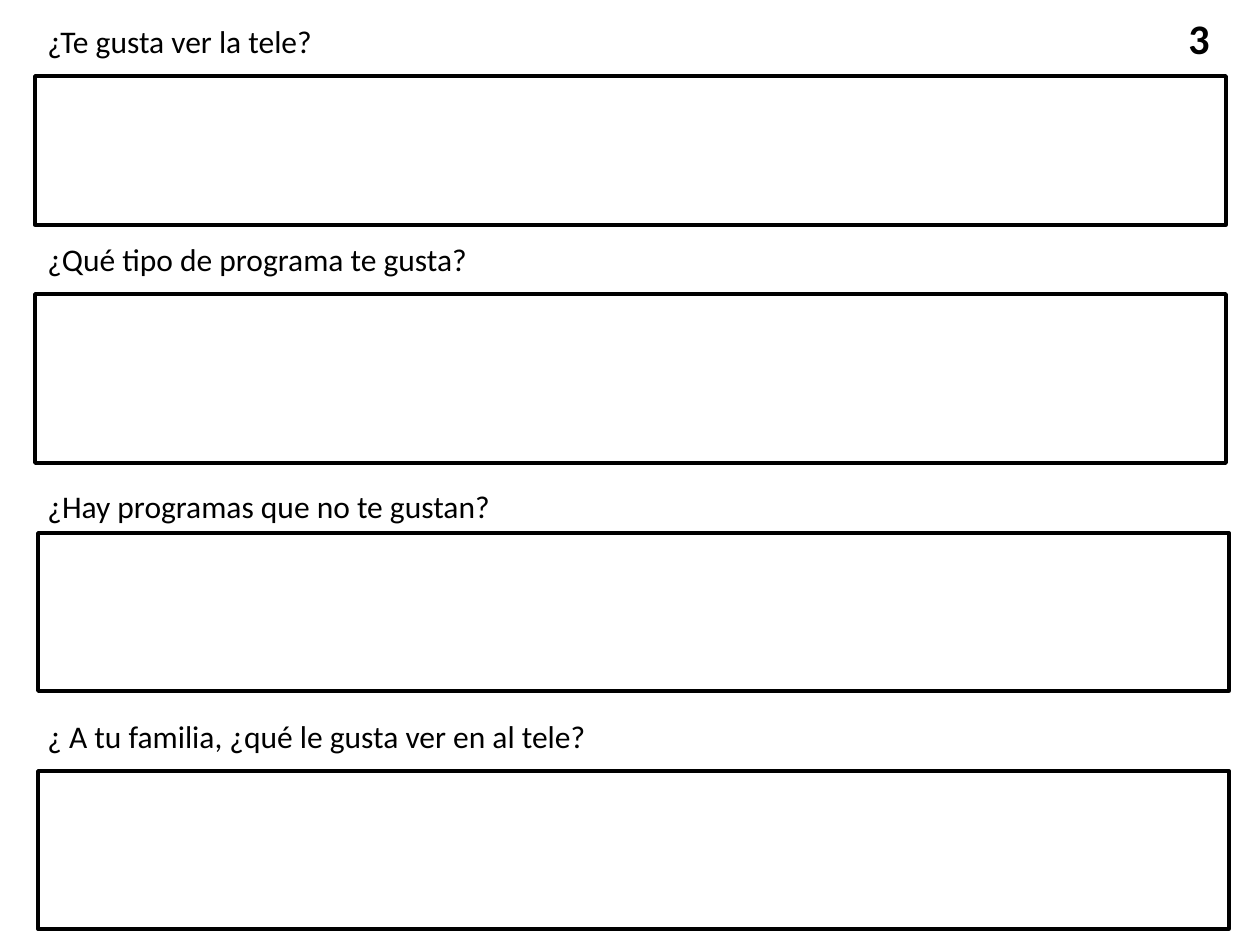
from pptx import Presentation
from pptx.dml.color import RGBColor
from pptx.enum.shapes import MSO_SHAPE as Shape
from pptx.enum.text import MSO_AUTO_SIZE as AutoSize
from pptx.util import Emu, Pt

BLACK = RGBColor(0, 0, 0)
ANSWER_W = 1191
LABEL_H = 50

# question, (left, top, height of block), label width, answer (indent, offset)
QUESTIONS = [
    ("¿Te gusta ver la tele?", (35, 16, 209), 294, (0, 60)),
    ("¿Qué tipo de programa te gusta?", (35, 234, 229), 451, (0, 60)),
    ("¿Hay programas que no te gustan?", (35, 481, 210), 474, (3, 52)),
    ("¿ A tu familia, ¿qué le gusta ver en al tele?", (35, 711, 218), 571, (3, 60)),
]


def px(n):
    return Emu(round(n * 914400 / 126))


def add_text(s, text, box, size, bold=False, wrap=False):
    tf = s.shapes.add_textbox(*map(px, box)).text_frame
    tf.word_wrap = wrap
    tf.auto_size = AutoSize.SHAPE_TO_FIT_TEXT
    r = tf.paragraphs[0].add_run()
    r.text = text
    for name, value in {"name": "Calibri", "size": Pt(size), "bold": bold}.items():
        setattr(r.font, name, value)
    r.font.color.rgb = BLACK


def add_question(s, text, block, label_w, answer):
    """A question with an empty answer frame beneath it."""
    left, top, height = block
    indent, offset = answer
    sp = s.shapes.add_shape(Shape.RECTANGLE, px(left + indent), px(top + offset),
                            px(ANSWER_W), px(height - offset))
    sp.shadow.inherit = False
    sp.fill.background()
    sp.line.color.rgb = BLACK
    sp.line.width = Pt(2)
    add_text(s, text, (left, top, label_w, LABEL_H), 18)


def main():
    prs = Presentation()
    prs.slide_width, prs.slide_height = px(1260), px(945)
    s = prs.slides.add_slide(prs.slide_layouts[6])

    # Questions and answer frames
    for question in QUESTIONS:
        add_question(s, *question)

    # Sheet number
    add_text(s, "3", (1176, 6, 84, 63), 24, bold=True, wrap=True)

    prs.save("out.pptx")


if __name__ == "__main__":
    main()
